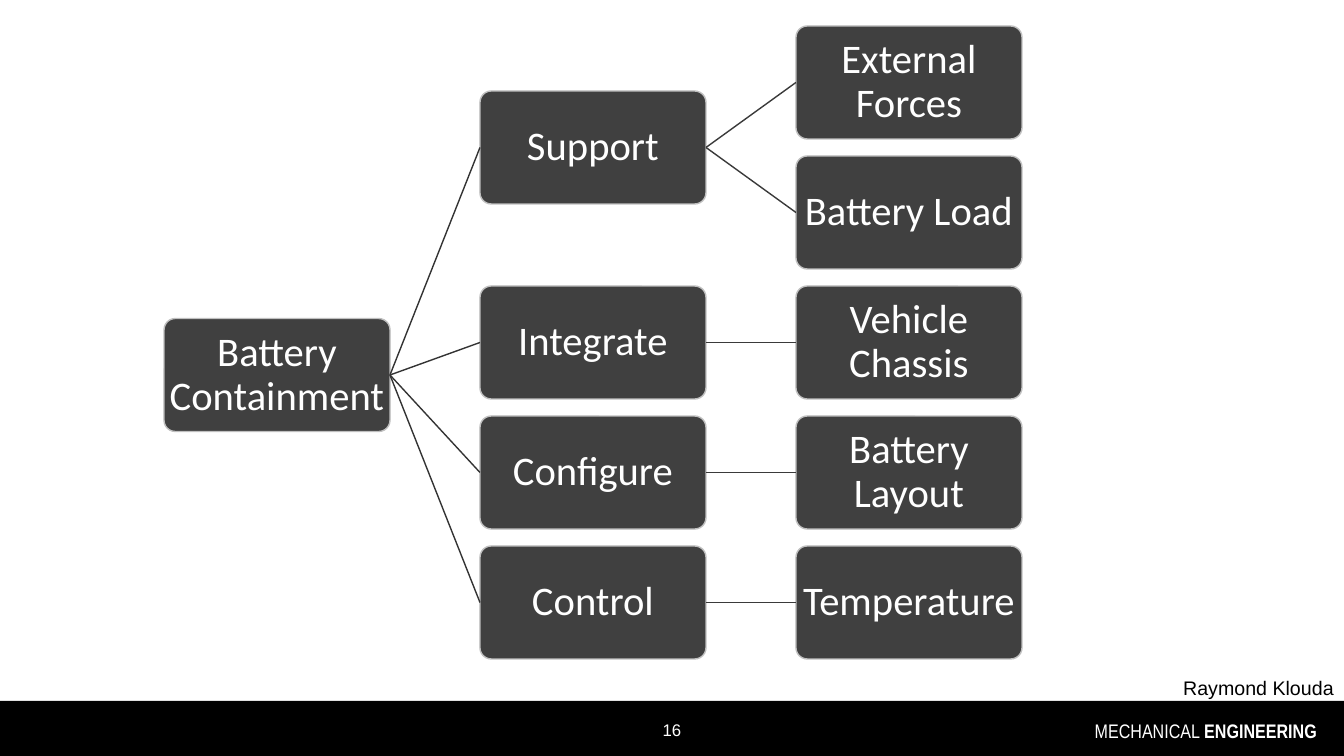
"""Build the battery containment function tree slide."""
from dataclasses import dataclass

from lxml.etree import SubElement
from pptx import Presentation
from pptx.dml.color import RGBColor as RGB
from pptx.enum.shapes import MSO_CONNECTOR as Conn, MSO_SHAPE as Shape
from pptx.enum.text import MSO_ANCHOR as Anchor, MSO_AUTO_SIZE as Fit, PP_ALIGN as Align
from pptx.oxml.ns import qn
from pptx.util import Emu, Pt


@dataclass(frozen=True)
class Theme:
    white: RGB = RGB(0xFF, 0xFF, 0xFF)
    black: RGB = RGB(0, 0, 0)
    node: RGB = RGB(0x40, 0x40, 0x40)
    border: RGB = RGB(0xBF, 0xBF, 0xBF)
    links: tuple[RGB, ...] = (RGB(0x33, 0x33, 0x33), RGB(0x3A, 0x3A, 0x3A))
    node_size: int = 29
    label_size: int = 14
    number_size: int = 12


@dataclass(frozen=True)
class Node:
    text: str
    children: tuple["Node", ...] = ()


THEME = Theme()
EMU_PER_INCH, PX_PER_INCH = 914400, 100.8
WIDTH, HEIGHT = 1344, 756
LEFT, TOP, COL_STEP, ROW_STEP = 164, 26, 316, 130
NODE_W, NODE_H = 226, 113
LEFT_SITE, RIGHT_SITE = 1, 3

TREE = Node("Battery Containment", (
    Node("Support", (Node("External Forces"), Node("Battery Load"))),
    Node("Integrate", (Node("Vehicle Chassis"),)),
    Node("Configure", (Node("Battery Layout"),)),
    Node("Control", (Node("Temperature"),)),
))


def px(n: float) -> Emu:
    return Emu(round(n * EMU_PER_INCH / PX_PER_INCH))


def box(*lengths: float) -> list[Emu]:
    return [px(n) for n in lengths]


def write(tf, *texts: str, size: int, color: RGB = THEME.white, font: str = "Arial",
          align: Align = Align.CENTER, anchor: Anchor = Anchor.MIDDLE,
          spacing: float = 1.0, bold_last: bool = False) -> None:
    tf.word_wrap, tf.auto_size, tf.vertical_anchor = True, Fit.NONE, anchor
    p = tf.paragraphs[0]
    p.alignment, p.line_spacing, p.space_before = align, spacing, Pt(0)
    for text in texts:
        r = p.add_run()
        r.text = text
        r.font.name, r.font.size = font, Pt(size)
        r.font.color.rgb = color
        r.font.bold = bold_last and text == texts[-1]


def add_block(s, kind: Shape, at: list[Emu], fill: RGB):
    sp = s.shapes.add_shape(kind, *at)
    sp.shadow.inherit = False
    sp.fill.solid()
    sp.fill.fore_color.rgb = fill
    sp.line.fill.background()
    return sp


def add_node(s, text: str, depth: int, row: float):
    at = box(LEFT + depth * COL_STEP, TOP + row * ROW_STEP, NODE_W, NODE_H)
    sp = add_block(s, Shape.ROUNDED_RECTANGLE, at, THEME.node)
    sp.adjustments[0] = 0.1
    sp.line.color.rgb, sp.line.width = THEME.border, Pt(1)
    tf = sp.text_frame
    tf.margin_left = tf.margin_right = tf.margin_top = tf.margin_bottom = px(1)
    write(tf, text, size=THEME.node_size, font="Calibri", spacing=0.9)
    return sp


def add_link(s, parent, child, color: RGB) -> None:
    link = s.shapes.add_connector(Conn.STRAIGHT, 0, 0, 0, 0)
    link.begin_connect(parent, RIGHT_SITE)
    link.end_connect(child, LEFT_SITE)
    link.line.color.rgb, link.line.width = color, Pt(1)
    SubElement(link.element.spPr, qn("a:effectLst"))


def add_tree(s, node: Node, depth: int = 0, first_row: int = 0):
    """Draw a subtree; return its root shape, root row and next free row."""
    branches, next_row = [], first_row
    for child in node.children:
        sp, row, next_row = add_tree(s, child, depth + 1, next_row)
        branches.append((sp, row))
    row = (branches[0][1] + branches[-1][1]) / 2 if branches else first_row
    root = add_node(s, node.text, depth, row)
    for sp, _ in branches:
        add_link(s, root, sp, THEME.links[depth])
    return root, row, max(next_row, first_row + 1)


def main() -> None:
    prs = Presentation()
    prs.slide_width, prs.slide_height = box(WIDTH, HEIGHT)
    s = prs.slides.add_slide(prs.slide_layouts.get_by_name("Section Header"))
    title = s.shapes.title.element
    title.getparent().remove(title)

    add_block(s, Shape.RECTANGLE, box(0, 701, WIDTH, 55), THEME.black)
    brand = s.shapes.add_textbox(*box(1025, 714, 302, 40))
    write(brand.text_frame, "MECHANICAL ", "ENGINEERING", size=THEME.label_size,
          font="Arial Narrow", align=Align.RIGHT, anchor=Anchor.TOP, bold_last=True)
    number = s.shapes.add_textbox(*box(521, 710, 302, 40))
    write(number.text_frame, "16", size=THEME.number_size)

    author = s.placeholders[1]
    author.left, author.top, author.width, author.height = box(991, 674, 353, 25)
    write(author.text_frame, "Raymond Klouda", size=THEME.label_size, color=THEME.black,
          align=Align.RIGHT, anchor=Anchor.TOP, spacing=0.9)

    add_tree(s, TREE)
    prs.save("out.pptx")


if __name__ == "__main__":
    main()
